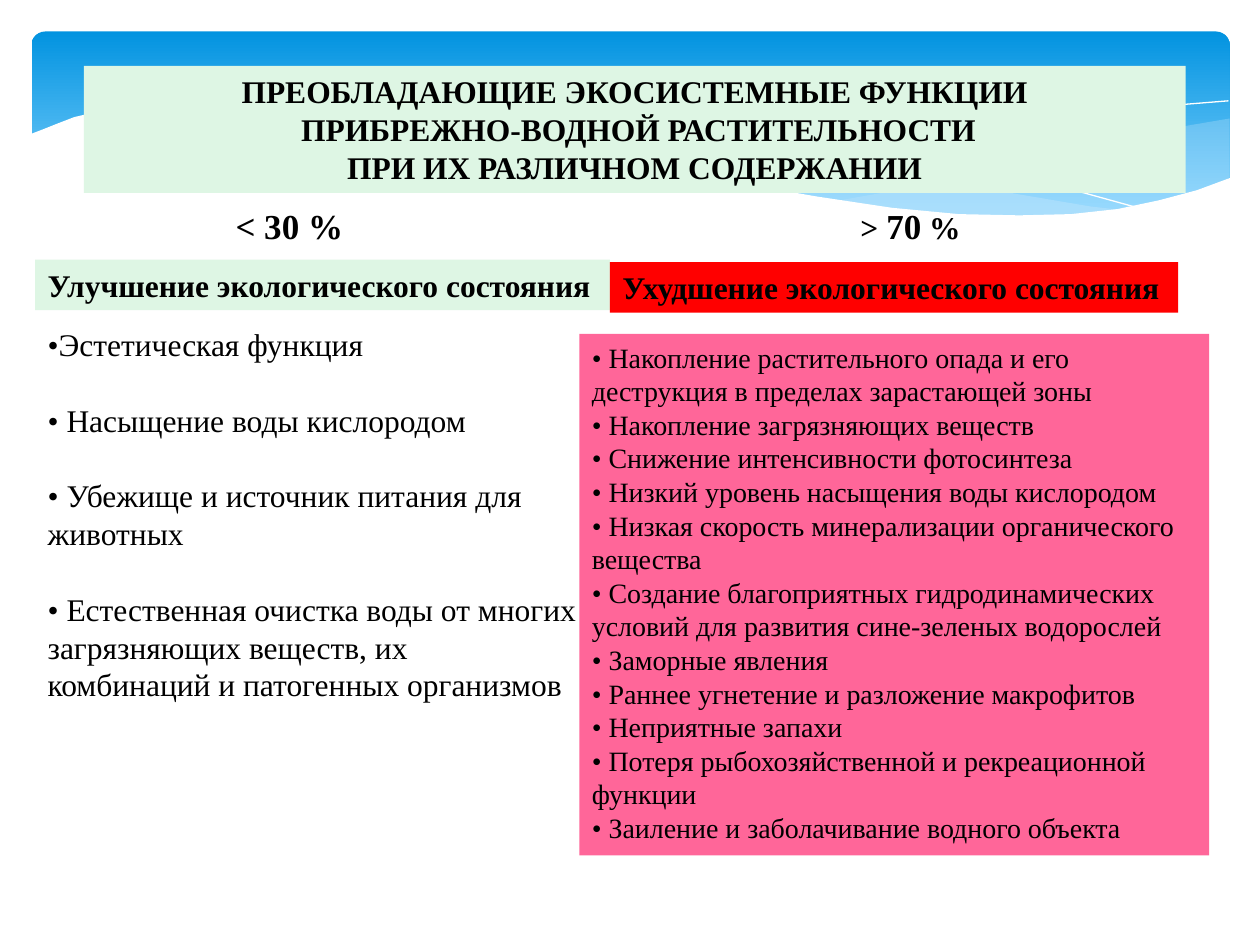
from lxml import etree
from pptx import Presentation
from pptx.dml.color import RGBColor
from pptx.enum import shapes, text
from pptx.oxml.ns import qn
from pptx.util import Pt

BLACK = RGBColor(0x00, 0x00, 0x00)
WHITE = RGBColor(0xFF, 0xFF, 0xFF)
SKY = RGBColor(0x02, 0x93, 0xE0)
PALE_SKY = RGBColor(0x83, 0xD3, 0xFE)
MIST = RGBColor(0xC6, 0xE7, 0xFC)
MINT = RGBColor(0xDE, 0xF6, 0xE4)
RED = RGBColor(0xFF, 0x00, 0x00)
PINK = RGBColor(0xFF, 0x66, 0x99)
HUNDREDTH_INCH = Pt(0.72)


def draw_wave(page, points, closed, color, alpha=100):
    builder = page.shapes.build_freeform(*points[0], scale=HUNDREDTH_INCH)
    builder.add_line_segments(points[1:], close=closed)
    wave = builder.convert_to_shape()
    wave.shadow.inherit = False
    if not closed:
        wave.fill.background()
        wave.line.color.rgb = color
        wave.line.width = Pt(0)
        return
    wave.line.fill.background()
    wave.fill.solid()
    wave.fill.fore_color.rgb = color
    if alpha < 100:
        tone = wave._element.spPr.find(qn("a:solidFill"))[0]
        etree.SubElement(tone, qn("a:alpha"), val=str(alpha * 1000))


def write_text(box, place, lines, size, bold=False, fill=None, gap=0,
               align=text.PP_ALIGN.LEFT, wrap=True):
    box.left, box.top, box.width, box.height = (Pt(value) for value in place)
    if fill is not None:
        box.fill.solid()
        box.fill.fore_color.rgb = fill
    frame = box.text_frame
    frame.text = "\n".join(lines)
    frame.auto_size = text.MSO_AUTO_SIZE.NONE
    frame.word_wrap = wrap
    frame.vertical_anchor = text.MSO_ANCHOR.TOP
    for para in frame.paragraphs:
        para.alignment = align
        para.space_before = Pt(0)
        para.space_after = Pt(gap)
        para.font.name = "Times New Roman"
        para.font.size = Pt(size)
        para.font.bold = bold
        para.font.color.rgb = BLACK
        settings = para._p.get_or_add_pPr()
        settings.set("marL", "0")
        settings.set("indent", "0")
        first_run = settings.find(qn("a:defRPr"))
        first_run.addprevious(etree.Element(qn("a:buNone")))


deck = Presentation()
deck.slide_width = Pt(720)
deck.slide_height = Pt(540)
page = deck.slides.add_slide(deck.slide_layouts.get_by_name("Comparison"))

banner = page.shapes.add_shape(
    shapes.MSO_SHAPE.ROUNDED_RECTANGLE, Pt(18), Pt(18), Pt(684.7), Pt(112.3))
banner.adjustments[0] = 0.07
banner.shadow.inherit = False
banner.line.fill.background()
banner.fill.gradient()
banner.fill.gradient_angle = 270
for stop, color, position in zip(banner.fill.gradient_stops, (SKY, PALE_SKY), (0, 0.9)):
    stop.color.rgb = color
    stop.position = position

right_wave = [
    (976, 94), (935, 101), (891, 110), (861, 118), (805, 131), (753, 143),
    (706, 152), (661, 160), (705, 165), (745, 169), (781, 171), (814, 172),
    (844, 171), (872, 169), (897, 165), (921, 160), (942, 154), (963, 147), (976, 141)]
long_wave = [
    (893, 167), (866, 164), (807, 154), (741, 142), (668, 126), (598, 109),
    (541, 97), (489, 89), (442, 83), (399, 80), (361, 80), (313, 82), (286, 86),
    (323, 90), (383, 101), (449, 116), (530, 135), (601, 150), (665, 161),
    (722, 168), (773, 172), (818, 173), (857, 171)]
falling_line = [
    (309, 90), (344, 84), (387, 82), (433, 82), (489, 84), (533, 88), (582, 94),
    (636, 103), (695, 114), (760, 128), (831, 145), (907, 166)]
rising_line = [
    (613, 151), (653, 141), (695, 130), (748, 117), (806, 104), (866, 93),
    (910, 86), (938, 83), (975, 80)]
white_wave = [
    (977, 141), (950, 151), (920, 159), (887, 166), (850, 170), (809, 171),
    (761, 170), (708, 165), (648, 156), (579, 144), (503, 128), (447, 114),
    (391, 102), (340, 92), (292, 85), (250, 81), (211, 78), (177, 78), (146, 79),
    (119, 82), (95, 85), (76, 89), (59, 93), (46, 98), (36, 102), (23, 107),
    (23, 224), (977, 224)]
for points, closed, color, alpha in (
        (right_wave, True, MIST, 29), (long_wave, True, MIST, 40),
        (falling_line, False, WHITE, 100), (rising_line, False, WHITE, 100),
        (white_wave, True, WHITE, 100)):
    draw_wave(page, points, closed, color, alpha)

title, left_heading, left_list, right_heading, right_list = page.placeholders
for box in (title, left_heading, right_heading, left_list, right_list):
    box._element.getparent().append(box._element)

write_text(title, (48, 37.6, 629.5, 72.7), [
    "ПРЕОБЛАДАЮЩИЕ ЭКОСИСТЕМНЫЕ ФУНКЦИИ",
    " ПРИБРЕЖНО-ВОДНОЙ РАСТИТЕЛЬНОСТИ",
    "ПРИ ИХ РАЗЛИЧНОМ СОДЕРЖАНИИ",
], 18, bold=True, fill=MINT, align=text.PP_ALIGN.CENTER)

for left, width, parts in (
        (127.5, 76, [("< 30 %", 20)]),
        (484.6, 72, [("> ", 18), ("70", 20), (" %", 18)])):
    share = page.shapes.add_textbox(0, 0, 0, 0)
    write_text(share, (left, 113.2, width, 31.5), [""], 20, bold=True, wrap=False)
    for words, size in parts:
        span = share.text_frame.paragraphs[0].add_run()
        span.text = words
        span.font.size = Pt(size)

write_text(left_heading, (20, 148.4, 328.5, 28.8),
           ["Улучшение экологического состояния"], 18, bold=True, fill=MINT, wrap=False)
write_text(right_heading, (348.5, 149.8, 324.7, 28.8),
           ["Ухудшение экологического состояния"], 18, bold=True, fill=RED, wrap=False)

write_text(left_list, (20, 182.2, 317.5, 225.4), [
    "•Эстетическая функция",
    "• Насыщение воды кислородом",
    "• Убежище и источник питания для животных",
    "• Естественная очистка воды от многих загрязняющих веществ, "
    "их комбинаций и патогенных организмов",
], 18, gap=21.6)

write_text(right_list, (331, 190.8, 360, 298), [
    "• Накопление растительного опада и его деструкция в пределах зарастающей зоны",
    "• Накопление загрязняющих веществ",
    "• Снижение интенсивности фотосинтеза",
    "• Низкий уровень насыщения воды кислородом",
    "• Низкая скорость минерализации органического вещества",
    "• Создание благоприятных гидродинамических условий для развития "
    "сине-зеленых водорослей",
    "• Заморные явления",
    "• Раннее угнетение и разложение макрофитов",
    "• Неприятные запахи",
    "• Потеря рыбохозяйственной и рекреационной функции",
    "• Заиление и заболачивание водного объекта",
], 16, fill=PINK)

deck.save("out.pptx")
